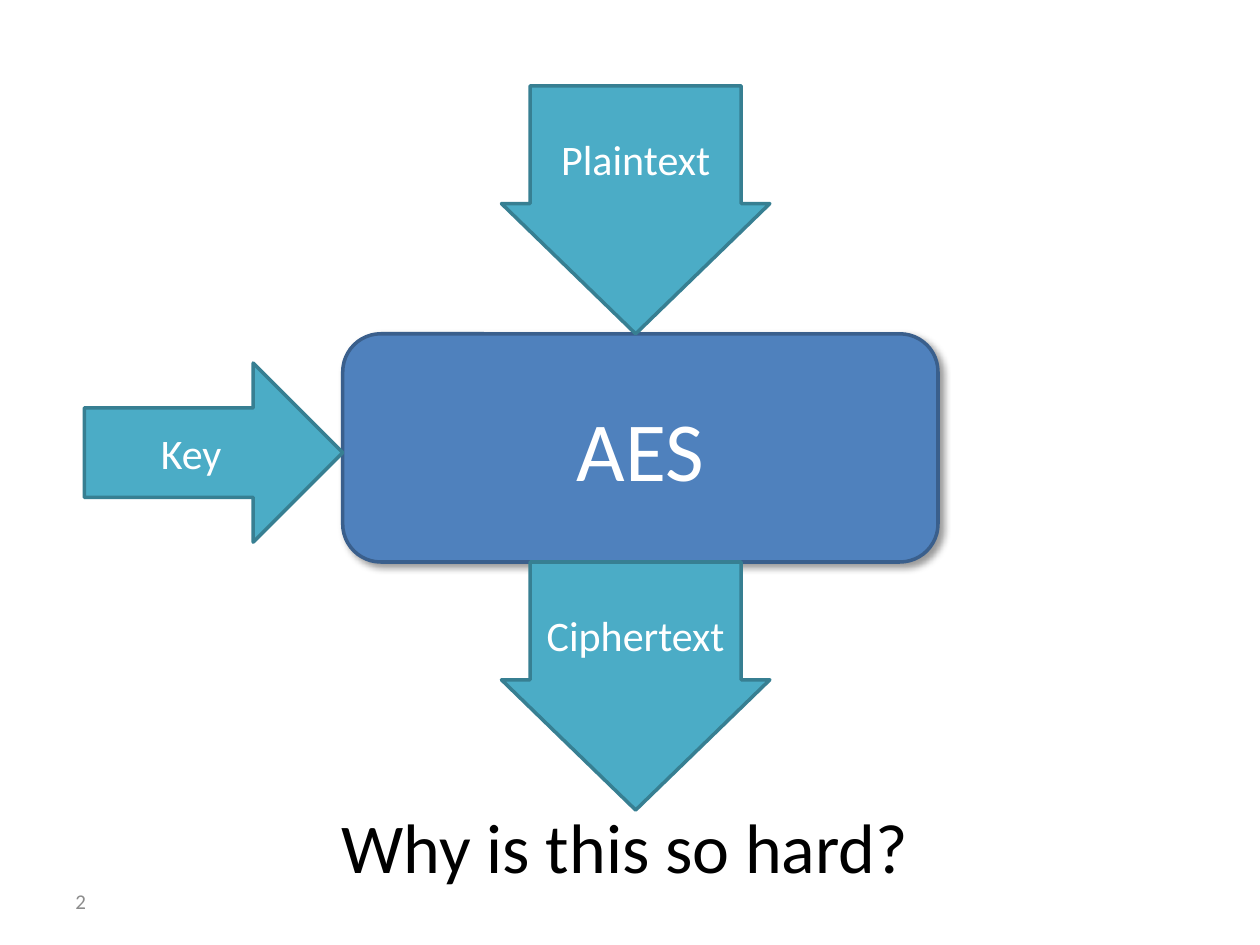
import pptx
import pptx.dml.color
import pptx.enum.shapes
import pptx.enum.text
import pptx.oxml
import pptx.oxml.ns
import pptx.util

Cm = pptx.util.Cm
Pt = pptx.util.Pt
RGBColor = pptx.dml.color.RGBColor
MSO_SHAPE = pptx.enum.shapes.MSO_SHAPE
PP_ALIGN = pptx.enum.text.PP_ALIGN
MSO_ANCHOR = pptx.enum.text.MSO_ANCHOR

BLACK = RGBColor(0x00, 0x00, 0x00)
WHITE = RGBColor(0xFF, 0xFF, 0xFF)
GRAY = RGBColor(0x8C, 0x8C, 0x8C)
BLUE = RGBColor(0x4F, 0x81, 0xBD)
DARK_BLUE = RGBColor(0x3A, 0x5F, 0x8C)
TEAL = RGBColor(0x4B, 0xAC, 0xC6)
DARK_TEAL = RGBColor(0x37, 0x7F, 0x92)

SHADOW_XML = (
    f'<a:effectLst {pptx.oxml.ns.nsdecls("a")}>'
    '<a:outerShdw blurRad="50800" dist="38100" dir="2700000" algn="tl" rotWithShape="0">'
    '<a:srgbClr val="000000"><a:alpha val="40000"/></a:srgbClr>'
    '</a:outerShdw></a:effectLst>'
)


class Diagram:
    font = "Calibri"
    line_width = Pt(2)

    def __init__(self, slide):
        self.s = slide

    def set_text(self, sp, text, size, color, align, anchor):
        tf = sp.text_frame
        tf.word_wrap = True
        tf.vertical_anchor = anchor
        p = tf.paragraphs[0]
        p.alignment = align
        r = p.add_run()
        r.text = text
        r.font.name = self.font
        r.font.size = Pt(size)
        r.font.color.rgb = color

    def text(self, text, box, size, color, align, anchor):
        sp = self.s.shapes.add_textbox(*map(Cm, box))
        self.set_text(sp, text, size, color, align, anchor)

    def shape(self, kind, text, box, size, fill, line, adjustments=()):
        sp = self.s.shapes.add_shape(kind, *map(Cm, box))
        for i, value in enumerate(adjustments):
            sp.adjustments[i] = value
        sp.shadow.inherit = False
        sp.fill.solid()
        sp.fill.fore_color.rgb = fill
        sp.line.color.rgb = line
        sp.line.width = self.line_width
        self.set_text(sp, text, size, WHITE, PP_ALIGN.CENTER, MSO_ANCHOR.MIDDLE)
        return sp

    def cipher(self, text, box):
        """Rounded block with a soft shadow."""
        sp = self.shape(MSO_SHAPE.ROUNDED_RECTANGLE, text, box, 48, BLUE, DARK_BLUE)
        sp_pr = sp._element.spPr
        sp_pr.replace(sp_pr.find(pptx.oxml.ns.qn("a:effectLst")),
                      pptx.oxml.parse_xml(SHADOW_XML))

    def arrow(self, kind, text, box, adjustments=()):
        self.shape(kind, text, box, 24, TEAL, DARK_TEAL, adjustments)


def main():
    prs = pptx.Presentation()
    prs.slide_width, prs.slide_height = Cm(25.4), Cm(19.05)
    d = Diagram(prs.slides.add_slide(prs.slide_layouts[6]))

    d.text("Why is this so hard?", (4.98, 16.08, 15.24, 2.24), 40, BLACK,
           PP_ALIGN.CENTER, MSO_ANCHOR.TOP)
    d.text("2", (1.27, 17.65, 5.92, 1.02), 12, GRAY,
           PP_ALIGN.LEFT, MSO_ANCHOR.MIDDLE)

    left, top, width, height = 6.91, 6.73, 12, 4.6
    d.cipher("AES", (left, top, width, height))

    flow_height = 5
    for text, y in (("Plaintext", top - flow_height), ("Ciphertext", top + height)):
        d.arrow(MSO_SHAPE.DOWN_ARROW, text, (10.11, y, 5.41, flow_height),
                (0.787, 0.525))
    key_width = 5.21
    d.arrow(MSO_SHAPE.RIGHT_ARROW, "Key", (left - key_width, 7.32, key_width, 3.61))

    prs.save("out.pptx")


if __name__ == "__main__":
    main()
